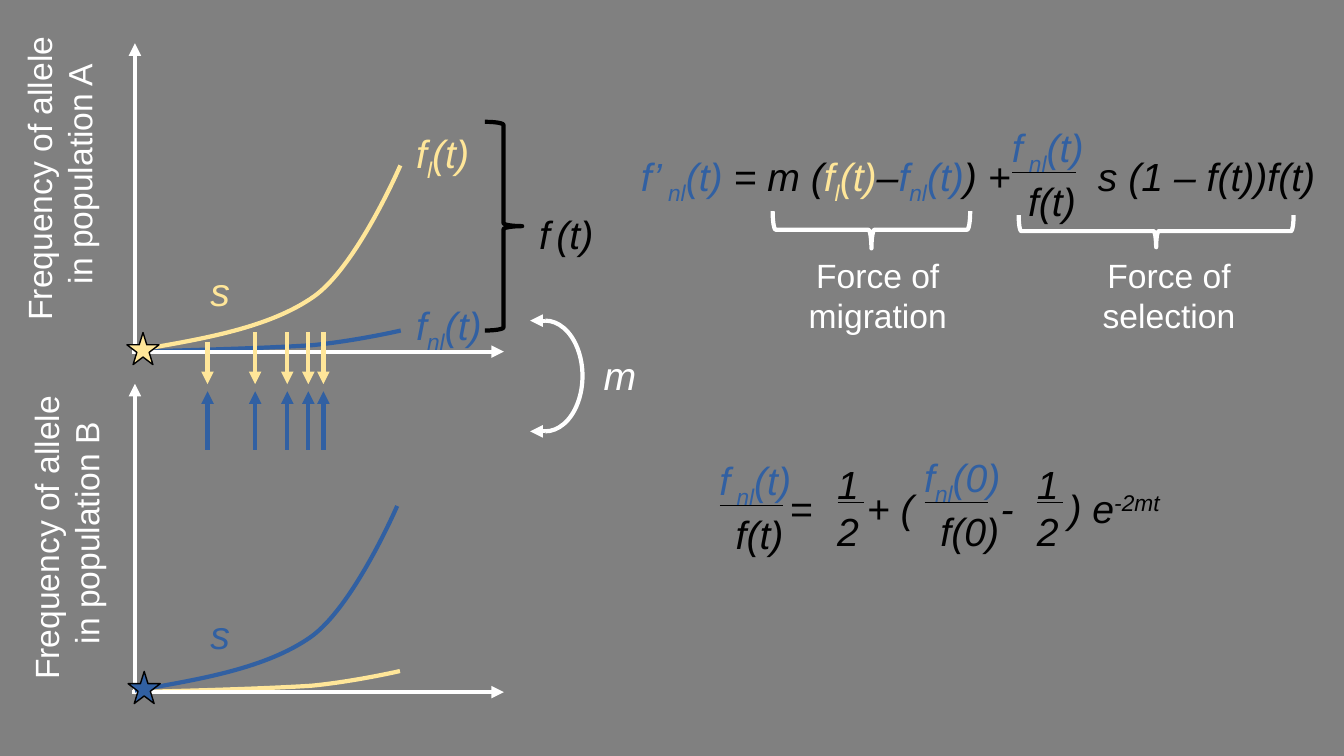
"""Build the slide on allele frequencies under migration and selection."""
from lxml import etree
from pptx import Presentation
from pptx.dml.color import RGBColor
from pptx.enum.shapes import MSO_CONNECTOR, MSO_SHAPE
from pptx.enum.text import MSO_AUTO_SIZE, PP_ALIGN
from pptx.oxml.ns import qn
from pptx.util import Cm, Pt

STRAIGHT = MSO_CONNECTOR.STRAIGHT
BRACE = MSO_SHAPE.RIGHT_BRACE
BRACKET = MSO_SHAPE.RIGHT_BRACKET
STAR = MSO_SHAPE.STAR_5_POINT
FIT = MSO_AUTO_SIZE.SHAPE_TO_FIT_TEXT
LEFT, CENTER = PP_ALIGN.LEFT, PP_ALIGN.CENTER

COLORS = {"grey": "808080", "white": "FFFFFF", "black": "000000",
          "yellow": "FFE699", "blue": "3160A2"}
MATH = {"name": "Arial", "size": Pt(28), "italic": True}
LABEL = {"name": "Arial", "size": Pt(24), "italic": False}
STEEP = [(0, 0), (1.65, -0.28), (3.3, -0.56), (4.42, -1.34),
         (5.51, -2.1), (6.61, -4.65), (6.61, -4.65)]
SHALLOW = [(0, 0), (1.67, -0.04), (3.35, -0.09), (4.47, -0.16),
           (5.58, -0.27), (6.7, -0.53), (6.7, -0.53)]
ARROW_X = (5.23, 6.43, 7.24, 7.77, 8.15)
SUB, SUPER = -25000, 30000
BOX_HEIGHT = 1.45


def rgb(color):
    return RGBColor.from_string(COLORS[color])


def set_line(sp, color, width):
    sp.line.color.rgb = rgb(color)
    sp.line.width = Pt(width)


def add_line(shapes, start, end, color, width=3, arrow=True):
    sp = shapes.add_connector(STRAIGHT, *map(Cm, start + end))
    set_line(sp, color, width)
    if arrow:
        ln = sp._element.spPr.find(qn("a:ln"))
        etree.SubElement(ln, qn("a:tailEnd"), type="triangle")
    etree.SubElement(sp._element.spPr, qn("a:effectLst"))


def add_outline(shapes, kind, box, color, width=3, fill=None, rotation=0):
    sp = shapes.add_shape(kind, *map(Cm, box))
    sp.shadow.inherit = False
    sp.rotation = rotation
    if fill:
        sp.fill.solid()
        sp.fill.fore_color.rgb = rgb(fill)
    else:
        sp.fill.background()
    set_line(sp, color, width)
    return sp


def add_curve(shapes, left, base, offsets, color):
    points = [(Cm(left + dx), Cm(base + dy)) for dx, dy in offsets]
    builder = shapes.build_freeform(*points[0], scale=1.0)
    builder.add_line_segments(points[1:], close=False)
    sp = builder.convert_to_shape()
    outline = next(sp._element.iter(qn("a:path")))
    for i, segment in enumerate(outline.findall(qn("a:lnTo"))):
        if i % 3 == 0:
            cubic = etree.SubElement(outline, qn("a:cubicBezTo"))
        cubic.append(segment[0])
        outline.remove(segment)
    sp.shadow.inherit = False
    sp.fill.background()
    set_line(sp, color, 3)


def add_text(shapes, box, paragraphs, fmt=MATH, align=LEFT, rotation=0, tabs=()):
    sp = shapes.add_textbox(*map(Cm, box))
    sp.rotation = rotation
    tf = sp.text_frame
    tf.word_wrap = True
    tf.auto_size = FIT
    for i, runs in enumerate(paragraphs):
        p = tf.add_paragraph() if i else tf.paragraphs[0]
        p.alignment = align
        if tabs:
            stops = etree.SubElement(p._p.get_or_add_pPr(), qn("a:tabLst"))
            for stop in tabs:
                etree.SubElement(stops, qn("a:tab"), pos=str(Cm(stop)), algn="l")
        for text, color, baseline in runs:
            r = p.add_run()
            r.text = text
            for name, value in fmt.items():
                setattr(r.font, name, value)
            r.font.color.rgb = rgb(color)
            if baseline:
                r._r.get_or_add_rPr().set("baseline", str(baseline))


def add_math(shapes, left, top, width, *runs, tabs=()):
    add_text(shapes, (left, top, width, BOX_HEIGHT), [runs], tabs=tabs)


def plain(text, color="black"):
    return text, color, 0


def indexed(name, index, argument, color="blue"):
    return plain(name, color), (index, color, SUB), plain(argument, color)


def add_fraction(shapes, left, top, numerator, denominator, drop=1.36,
                 indent=0.41, widths=(3, 2.4), bar=1.6, width=1):
    middle = top + drop
    add_math(shapes, left, top, widths[0], *numerator)
    add_math(shapes, left + indent, middle, widths[1], plain(denominator))
    add_line(shapes, (left + 0.26, middle), (left + 0.26 + bar, middle),
             "black", width, arrow=False)


def add_panel(shapes, base, population, label_box, steep, shallow):
    steep_left, steep_color = steep
    shallow_left, shallow_color = shallow
    add_curve(shapes, shallow_left, base, SHALLOW, shallow_color)
    add_line(shapes, (3.4, base), (3.4, base - 7.77), "white")
    add_line(shapes, (3.33, base), (12.7, base), "white")
    lines = ("Frequency of allele ", f"in population {population}")
    add_text(shapes, label_box, [[plain(line, "white")] for line in lines],
             LABEL, CENTER, 270)
    add_curve(shapes, steep_left, base - 0.04, STEEP, steep_color)


def add_migration(shapes):
    for i, x in enumerate(ARROW_X):
        add_line(shapes, (x, 8.36 if i else 8.61), (x, 9.68), "yellow")
    exchange = shapes.add_group_shape().shapes
    sp = add_outline(exchange, BRACKET, (13.74, 8.08, 0.94, 2.79), "white")
    sp.adjustments[0] = 1.506
    for y in (8.08, 10.87):
        add_line(exchange, (13.74, y), (13.36, y), "white")
    add_math(shapes, 14.96, 8.74, 1.37, plain("m", "white"))
    returning = shapes.add_group_shape().shapes
    for x in ARROW_X:
        add_line(returning, (x, 11.33), (x, 9.86), "blue")


def add_rate_equation(shapes):
    add_math(shapes, 15.9, 3.71, 19,
             *indexed("f’", " nl", "(t) "), plain("= m ("),
             *indexed("f", "l", "(t)", "yellow"), plain("–"),
             *indexed("f", "nl", "(t)"), plain(") +\ts (1 – f(t))f(t)"),
             tabs=(11.52,))
    add_fraction(shapes, 25.25, 2.98, indexed("f", " nl", "(t)"), "f(t)",
                 widths=(4.5, 4.5), width=0.5)
    forces = (("migration", (21.49, 3.3, 0.94, 4.98), 18.97),
              ("selection", (28.73, 2.36, 0.81, 6.93), 26.31))
    for force, brace, left in forces:
        add_outline(shapes, BRACE, brace, "white", rotation=90)
        add_text(shapes, (left, 6.3, 6.3, 2.31),
                 [[plain(f"Force of {force}", "white")]], LABEL, CENTER)


def add_solution(shapes):
    add_fraction(shapes, 17.88, 11.38, indexed("f", " nl", "(t)"), "f(t)",
                 widths=(2.36, 1.73))
    add_math(shapes, 17.45, 12.07, 19, plain("\t=\t+ (\t-\t) e"),
             ("-2mt", "black", SUPER), tabs=(2.2, 4.15, 7.52, 9.23))
    add_fraction(shapes, 23.04, 11.3, indexed("f", "nl", "(0)"), "f(0)",
                 widths=(3.28, 2.62))
    for left in (20.85, 25.88):
        half = shapes.add_group_shape().shapes
        add_fraction(half, left, 11.48, [plain("1")], "2", drop=1.17,
                     indent=0, widths=(1.42, 1.42), bar=0.66, width=0.5)


def main():
    prs = Presentation()
    prs.slide_width, prs.slide_height = Cm(33.87), Cm(19.05)
    s = prs.slides.add_slide(prs.slide_layouts[6])
    s.background.fill.solid()
    s.background.fill.fore_color.rgb = rgb("grey")
    shapes = s.shapes

    add_panel(shapes, 8.86, "A", (-2.9, 3.23, 8.79, 2.31),
              (3.48, "yellow"), (3.4, "blue"))
    add_panel(shapes, 17.44, "B", (-2.72, 12.28, 8.79, 2.31),
              (3.4, "blue"), (3.38, "yellow"))
    add_math(shapes, 10.24, 7.47, 3.1, *indexed("f", "nl", "(t)"))
    add_math(shapes, 10.24, 3.13, 3.1, *indexed("f", "l", "(t)", "yellow"))
    add_outline(shapes, BRACE, (12.22, 3.07, 0.94, 5.26), "black")
    add_math(shapes, 13.34, 5.17, 3.1, *indexed("f", " ", "(t)", "black"))
    for top, color in ((6.6, "yellow"), (15.25, "blue")):
        add_math(shapes, 5.05, top, 3.1, plain("s", color))
    add_rate_equation(shapes)
    add_solution(shapes)
    add_migration(shapes)
    for left, top, color in ((3.23, 16.92, "blue"), (3.2, 8.38, "yellow")):
        add_outline(shapes, STAR, (left, top, 0.81, 0.81), "black", 1, color)
    prs.save("out.pptx")


if __name__ == "__main__":
    main()
